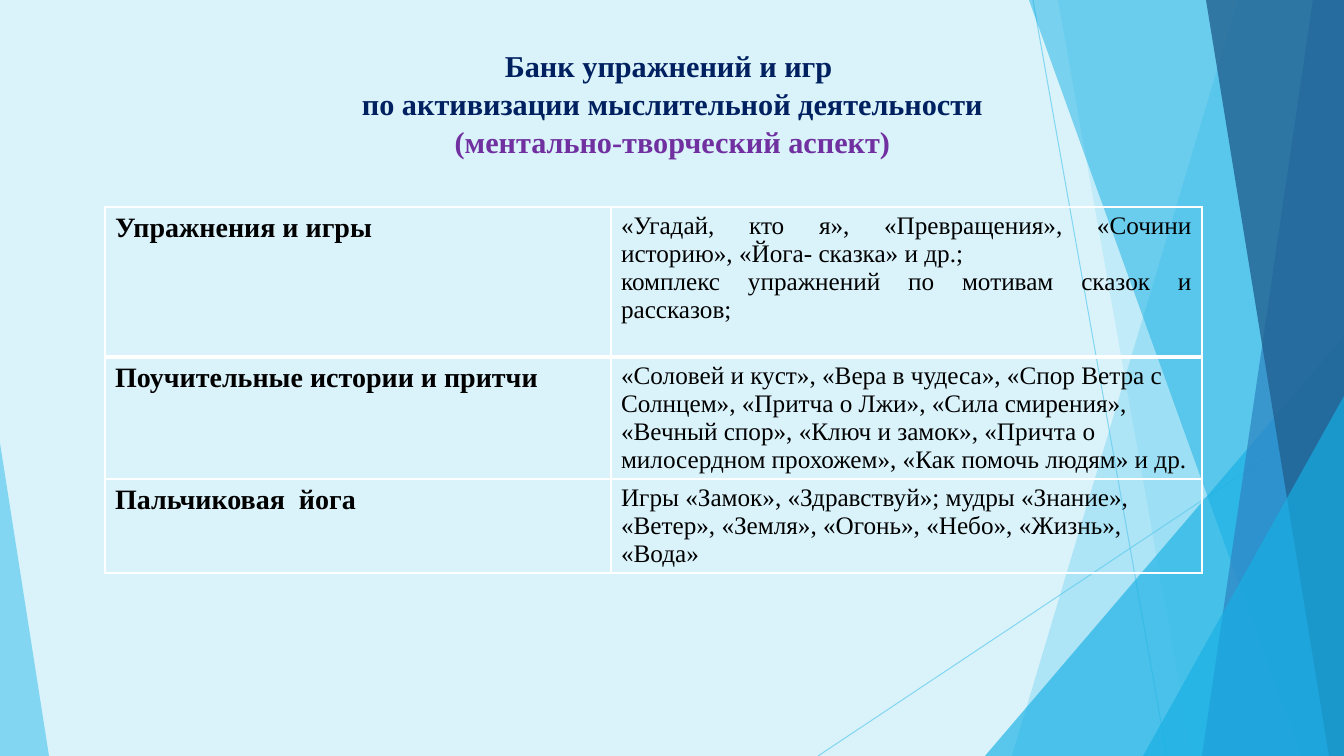
from lxml import etree
from pptx import Presentation
from pptx import util as u
from pptx.dml.color import RGBColor
from pptx.enum import shapes, text
from pptx.oxml import ns

HUE = {"page": "DAF3FB", "sky": "5FCBEF", "aqua": "17B0E4", "blue": "2E83C3",
       "deep": "226292", "navy": "002060", "plum": "7030A0",
       "black": "000000", "white": "FFFFFF"}
FONT = "Times New Roman"
WIDE, HIGH = 1344, 756

LINES = [((1033, 0), (1167, HIGH)), ((WIDE, 406), (818, HIGH))]
ROWS = [
    (150, "Упражнения и игры",
     ["«Угадай, кто я», «Превращения», «Сочини историю», «Йога- сказка» и др.;",
      "комплекс упражнений по мотивам сказок и рассказов;"]),
    (122, "Поучительные истории и притчи",
     ["«Соловей и куст», «Вера в чудеса», «Спор Ветра с Солнцем», "
      "«Притча о Лжи», «Сила смирения», «Вечный спор», «Ключ и замок», "
      "«Причта о милосердном прохожем», «Как помочь людям» и др."]),
    (94, "Пальчиковая  йога",
     ["Игры «Замок», «Здравствуй»; мудры «Знание», «Ветер», «Земля», "
      "«Огонь», «Небо», «Жизнь», «Вода»"]),
]


def px(num):
    """Turn px into EMU."""
    return u.Emu(round(num * 12192000 / WIDE))


def rgb(name):
    """Look up a colour."""
    return RGBColor.from_string(HUE[name])


def fade(item, part):
    """Make the colour of a shape or line partly clear."""
    tint = item.element.spPr.find(".//" + ns.qn("a:srgbClr"))
    etree.SubElement(tint, ns.qn("a:alpha"), val=str(part * 1000))


def paint(item, hue, part):
    """Give a shape a clear fill and no line."""
    item.shadow.inherit = False
    item.fill.solid()
    item.fill.fore_color.rgb = rgb(hue)
    item.line.fill.background()
    fade(item, part)


def add_line(slide, start, end):
    """Draw a thin line."""
    line = slide.shapes.add_connector(
        shapes.MSO_CONNECTOR.STRAIGHT, *map(px, start + end))
    line.line.color.rgb = rgb("sky")
    line.line.width = u.Pt(0.75)
    fade(line, 70)
    etree.SubElement(line.element.spPr, ns.qn("a:effectLst"))


def add_band(slide, top, foot, hue, part):
    """Draw a band from a slanted left side to the slide's right edge."""
    form = slide.shapes.build_freeform(px(top), 0)
    form.add_line_segments([(px(x), px(y)) for x, y in
                            ((WIDE, 0), (WIDE, HIGH), (foot, HIGH))])
    paint(form.convert_to_shape(), hue, part)


def add_wedge(slide, left, top, width, tip, hue, part):
    """Draw a right triangle that stands on the bottom edge."""
    wedge = slide.shapes.add_shape(
        shapes.MSO_SHAPE.ISOSCELES_TRIANGLE,
        px(left), px(top), px(width), px(HIGH - top))
    wedge.adjustments[0] = tip
    paint(wedge, hue, part)


def add_title(slide):
    """Place and fill the title in front of the bands."""
    title = slide.shapes.title
    slide.shapes.element.append(title.element)
    title.left, title.top, title.width, title.height = map(px, (93, 40, 1159, 81))
    frame = title.text_frame
    frame.word_wrap = True
    frame.auto_size = text.MSO_AUTO_SIZE.NONE
    frame.vertical_anchor = text.MSO_ANCHOR.TOP
    para = frame.paragraphs[0]
    para.alignment = text.PP_ALIGN.CENTER
    para.line_spacing = 1.05
    para.font.name, para.font.size, para.font.bold = FONT, u.Pt(21.6), True
    parts = [("Банк упражнений и игр ", "navy"),
             ("по активизации мыслительной деятельности", "navy"),
             ("(ментально-творческий аспект)", "plum")]
    for i, (words, hue) in enumerate(parts):
        if i:
            para.add_line_break()
        run = para.add_run()
        run.text = words
        run.font.color.rgb = rgb(hue)


def add_edge(cell, side, width):
    """Draw one white side of a cell."""
    props = cell._tc.get_or_add_tcPr()
    edge = etree.SubElement(props, ns.qn("a:ln" + side), w=str(u.Pt(width)))
    fill = etree.SubElement(edge, ns.qn("a:solidFill"))
    etree.SubElement(fill, ns.qn("a:srgbClr"), val=HUE["white"])


def fill_cell(cell, paras, size, bold, align, top, foot):
    """Write and format a cell."""
    for side, width in zip("LRTB", (1, 1, top, foot)):
        add_edge(cell, side, width)
    cell.fill.background()
    cell.text = "\n".join(paras)
    for para in cell.text_frame.paragraphs:
        para.alignment = align
        font = para.font
        font.name, font.size, font.bold = FONT, u.Pt(size), bold
        font.color.rgb = rgb("black")


def add_grid(slide):
    """Build the table of exercises."""
    widths = (506, 591)
    high = sum(row[0] for row in ROWS)
    grid = slide.shapes.add_table(
        len(ROWS), 2, px(105), px(207), px(sum(widths)), px(high)).table
    grid.first_row = grid.horz_banding = False
    for col, width in zip(grid.columns, widths):
        col.width = px(width)
    left = text.PP_ALIGN.LEFT
    for i, (tall, head, paras) in enumerate(ROWS):
        grid.rows[i].height = px(tall)
        top, foot = (3 if i == 1 else 1), (3 if i == 0 else 1)
        align = left if i else text.PP_ALIGN.JUSTIFY
        fill_cell(grid.cell(i, 0), [head], 20, True, left, top, foot)
        fill_cell(grid.cell(i, 1), paras, 18, False, align, top, foot)


def main():
    """Build and save the slide."""
    deck = Presentation()
    deck.slide_width, deck.slide_height = px(WIDE), px(HIGH)
    slide = deck.slides.add_slide(deck.slide_layouts[5])
    slide.background.fill.solid()
    slide.background.fill.fore_color.rgb = rgb("page")
    for start, end in LINES:
        add_line(slide, start, end)
    add_band(slide, 1238, 1012, "sky", 36)
    add_band(slide, 1058, 1192, "sky", 20)
    add_wedge(slide, 985, 336, 359, 1, "aqua", 66)
    add_band(slide, 1029, 1301, "aqua", 50)
    add_band(slide, 1313, 1202, "blue", 70)
    add_band(slide, 1206, 1329, "deep", 80)
    add_wedge(slide, 1143, 396, 201, 1, "aqua", 66)
    add_wedge(slide, 0, 443, 49, 0, "sky", 70)
    add_title(slide)
    add_grid(slide)
    deck.save("out.pptx")


if __name__ == "__main__":
    main()
